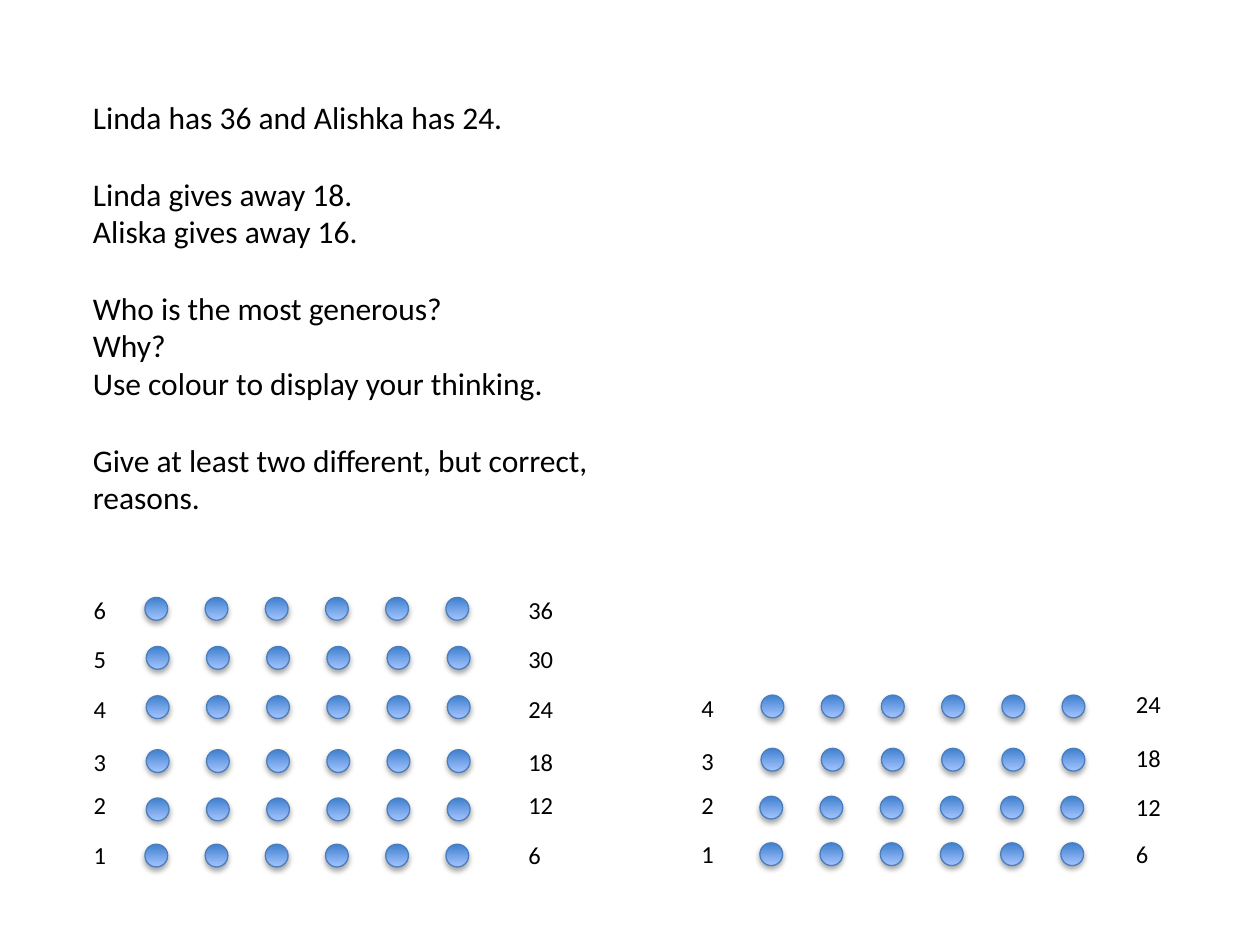
from lxml import etree
from pptx import Presentation
from pptx.dml.color import RGBColor
from pptx.enum import shapes, text
from pptx.oxml.ns import qn
from pptx.util import Pt

BLACK = RGBColor(0x00, 0x00, 0x00)
DARK = RGBColor(0x3F, 0x80, 0xCE)
LIGHT = RGBColor(0xA4, 0xC4, 0xFF)
EDGE = RGBColor(0x4B, 0x7E, 0xBC)

DOT = 13
STEP = 34.4
COLS = 6
LINE = 22

# Each group of lines is set off by one line of space.
TASK = [
    ["Linda has 36 and Alishka has 24."],
    ["Linda gives away 18.", "Aliska gives away 16."],
    ["Who is the most generous?", "Why?", "Use colour to display your thinking."],
    ["Give at least two different, but correct, reasons."],
]

# Rows from the bottom up: dot left, dot top, label top, total top.
LINDA = [
    (82.8, 482.4, 476.6, 476.6),
    (83.6, 456, 447.8, 447.8),
    (83.6, 428.4, 423.4, 423.4),
    (83.6, 397.6, 393.1, 393.1),
    (83.6, 369.4, 364.3, 364.3),
    (82.8, 341.4, 336.2, 336.2),
]
ALISHKA = [
    (434.2, 481.6, 475.9, 475.9),
    (434.2, 455, 447.8, 449.3),
    (434.9, 427.6, 422.6, 421.2),
    (434.9, 397.2, 392.4, 390.2),
]


def write(slide, groups, left, top, width, height, size=14):
    """Add a text box holding groups of lines, with space between groups."""
    box = slide.shapes.add_textbox(Pt(left), Pt(top), Pt(width), Pt(height))
    frame = box.text_frame
    frame.word_wrap = True
    frame.auto_size = text.MSO_AUTO_SIZE.SHAPE_TO_FIT_TEXT
    para = None
    for group in groups:
        for i, line in enumerate(group):
            first = para is None
            para = frame.paragraphs[0] if first else frame.add_paragraph()
            para.space_before = Pt(LINE if i == 0 and not first else 0)
            run = para.add_run()
            run.text = line
            run.font.name = "Calibri"
            run.font.size = Pt(size)
            run.font.color.rgb = BLACK


def shade(shape):
    """Give the shape a soft shadow straight below it."""
    shape.shadow.inherit = False
    effects = shape._element.spPr.find(qn("a:effectLst"))
    outer = etree.SubElement(
        effects, qn("a:outerShdw"), blurRad=str(Pt(3.1)), dist=str(Pt(1.8)),
        dir="5400000", rotWithShape="0")
    tint = etree.SubElement(outer, qn("a:srgbClr"), val="000000")
    etree.SubElement(tint, qn("a:alpha"), val="35000")


def dot(slide, left, top):
    shape = slide.shapes.add_shape(
        shapes.MSO_SHAPE.OVAL, Pt(left), Pt(top), Pt(DOT), Pt(DOT))
    shape._element.spPr.find(qn("a:xfrm")).set("flipV", "1")
    shape.fill.gradient()
    shape.fill.gradient_angle = 90
    for stop, color in zip(shape.fill.gradient_stops, (DARK, LIGHT)):
        stop.color.rgb = color
    shape.line.color.rgb = EDGE
    shape.line.width = Pt(0.75)
    shade(shape)


def array(slide, rows, label, total, width):
    """Draw rows of dots, numbered on the left and totalled on the right."""
    for n, (left, top, low, high) in enumerate(rows, 1):
        for col in range(COLS):
            dot(slide, left + col * STEP, top)
        write(slide, [[str(n)]], label, low, 25.2, 24.4)
        write(slide, [[str(n * COLS)]], total, high, width, 24.4)


def main():
    deck = Presentation()
    deck.slide_width, deck.slide_height = Pt(720), Pt(540)
    slide = deck.slides.add_slide(deck.slide_layouts[6])
    write(slide, TASK, 46, 52.6, 305.2, 269.2, size=18)
    array(slide, LINDA, label=46.4, total=294.8, width=43.2)
    array(slide, ALISHKA, label=393.7, total=642, width=39.6)
    deck.save("out.pptx")


if __name__ == "__main__":
    main()
